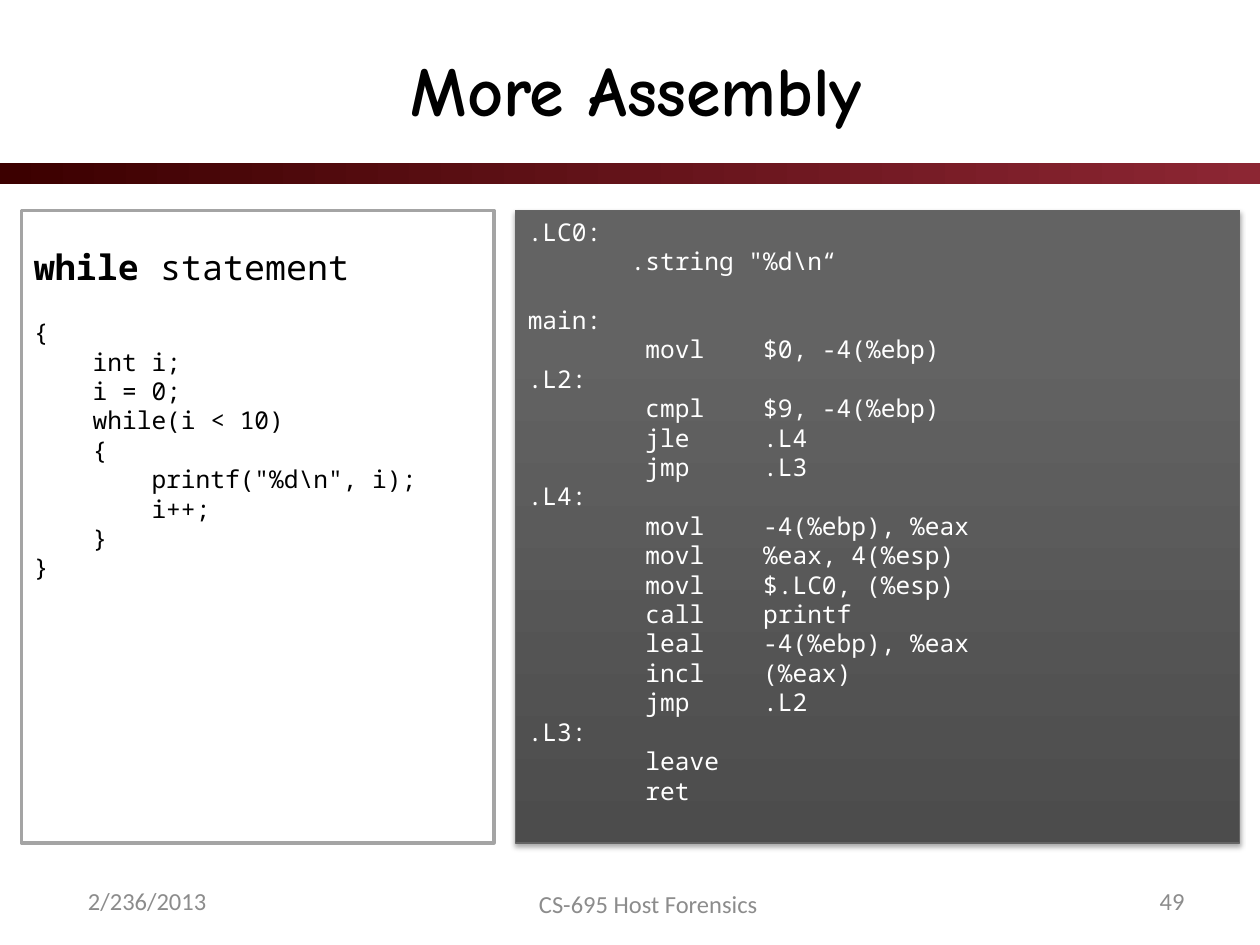
import pptx
import pptx.dml.color
import pptx.enum.shapes
import pptx.enum.text
import pptx.oxml
import pptx.oxml.ns
import pptx.util
from pptx.util import Inches

ALIGN = pptx.enum.text.PP_ALIGN
ANCHOR = pptx.enum.text.MSO_ANCHOR

C_CODE = r"""{
    int i;
    i = 0;
    while(i < 10)
    {
        printf("%d\n", i);
        i++;
    }
}""".split("\n")

DATA_SECTION = r""".LC0:
       .string "%d\n“""".split("\n")

MAIN_SECTION = """main:
        movl    $0, -4(%ebp)
.L2:
        cmpl    $9, -4(%ebp)
        jle     .L4
        jmp     .L3
.L4:
        movl    -4(%ebp), %eax
        movl    %eax, 4(%esp)
        movl    $.LC0, (%esp)
        call    printf
        leal    -4(%ebp), %eax
        incl    (%eax)
        jmp     .L2
.L3:
        leave
        ret""".split("\n")


def rgb(value):
    return pptx.dml.color.RGBColor.from_string(value)


class SlideBuilder:
    """Holds the deck's style and the slide being built."""

    title_font = "Comic Neue"
    body_font = "Calibri"
    code_font = "Noto Sans Mono"
    code_size = 14
    line_factor = 1.2

    def __init__(self, presentation):
        self.slide = presentation.slides.add_slide(presentation.slide_layouts[5])

    def style(self, paragraph, font, size, color, align=ALIGN.LEFT):
        paragraph.alignment = align
        paragraph.font.name = font
        paragraph.font.size = pptx.util.Pt(size)
        paragraph.font.color.rgb = rgb(color)

    def title(self, text, *box):
        shape = self.slide.shapes.title
        shape.left, shape.top, shape.width, shape.height = map(Inches, box)
        frame = shape.text_frame
        frame.text = text
        frame.vertical_anchor = ANCHOR.MIDDLE
        self.style(frame.paragraphs[0], self.title_font, 40, "000000", ALIGN.CENTER)
        frame.paragraphs[0].font.bold = True

    def footer(self, text, align, *box):
        frame = self.slide.shapes.add_textbox(*map(Inches, box)).text_frame
        frame.word_wrap = True
        frame.vertical_anchor = ANCHOR.MIDDLE
        frame.text = text
        self.style(frame.paragraphs[0], self.body_font, 14, "8C8C8C", align)

    def rectangle(self, *box):
        shape = self.slide.shapes.add_shape(
            pptx.enum.shapes.MSO_SHAPE.RECTANGLE, *map(Inches, box))
        shape.shadow.inherit = False
        shape.line.fill.background()
        frame = shape.text_frame
        frame.word_wrap = True
        frame.vertical_anchor = ANCHOR.TOP
        return shape

    def outline(self, shape, color, width):
        shape.line.color.rgb = rgb(color)
        shape.line.width = pptx.util.Pt(width)

    def gradient(self, shape, start, end, angle, end_position=1.0):
        """Fill with two colours; the angle runs counter-clockwise."""
        shape.fill.gradient()
        shape.fill.gradient_angle = angle
        stops = shape.fill.gradient_stops
        for stop, color, position in zip(stops, (start, end), (0, end_position)):
            stop.color.rgb = rgb(color)
            stop.position = position

    def drop_shadow(self, shape):
        effects = shape._element.spPr.find(pptx.oxml.ns.qn("a:effectLst"))
        effects.append(pptx.oxml.parse_xml(
            f'<a:outerShdw {pptx.oxml.ns.nsdecls("a")} blurRad="{pptx.util.Pt(3.1)}"'
            f' dist="{pptx.util.Pt(1.8)}" dir="5400000" rotWithShape="0">'
            '<a:srgbClr val="000000"><a:alpha val="35000"/></a:srgbClr>'
            '</a:outerShdw>'))

    def code_paragraph(self, frame, runs, color, size=code_size, gap=False):
        """Add one line of (text, bold) runs, after a line's gap if asked."""
        paragraph = frame.paragraphs[0]
        if paragraph.runs:
            paragraph = frame.add_paragraph()
        for text, bold in runs:
            run = paragraph.add_run()
            run.text = text
            run.font.bold = bold
        paragraph.line_spacing = pptx.util.Pt(self.line_factor * size)
        if gap:
            paragraph.space_before = pptx.util.Pt(self.line_factor * self.code_size)
        self.style(paragraph, self.code_font, size, color)

    def code_block(self, frame, lines, color, gap=False):
        for index, line in enumerate(lines):
            self.code_paragraph(frame, [(line, False)], color,
                                gap=gap and index == 0)


def main():
    presentation = pptx.Presentation()
    presentation.slide_width = Inches(10)
    presentation.slide_height = Inches(7.5)
    builder = SlideBuilder(presentation)

    title_bar = builder.rectangle(0, 1.29, 10, 0.17)
    builder.gradient(title_bar, "3C0000", "8C2633", 0)
    builder.title("More Assembly", 0.6, 0.15, 8.9, 1.1)

    builder.footer("2/236/2013", ALIGN.LEFT, 0.6, 6.95, 1.83, 0.4)
    builder.footer("CS-695 Host Forensics", ALIGN.CENTER, 3.9, 6.97, 2.49, 0.4)
    builder.footer("49", ALIGN.RIGHT, 7.67, 6.95, 1.83, 0.4)

    assembly = builder.rectangle(4.09, 1.67, 5.75, 5.02)
    builder.gradient(assembly, "4C4C4C", "636363", 90, end_position=0.8)
    builder.outline(assembly, "646464", 0.75)
    builder.drop_shadow(assembly)
    builder.code_block(assembly.text_frame, DATA_SECTION, "FFFFFF")
    builder.code_block(assembly.text_frame, MAIN_SECTION, "FFFFFF", gap=True)

    source = builder.rectangle(0.17, 1.67, 3.75, 5.02)
    source.fill.solid()
    source.fill.fore_color.rgb = rgb("FFFFFF")
    builder.outline(source, "A4A4A4", 2)
    source.text_frame.margin_top = Inches(0.28)
    builder.code_paragraph(source.text_frame,
                           [("while ", True), ("statement", False)],
                           "000000", size=20)
    builder.code_block(source.text_frame, C_CODE, "000000", gap=True)

    presentation.save("out.pptx")


if __name__ == "__main__":
    main()
